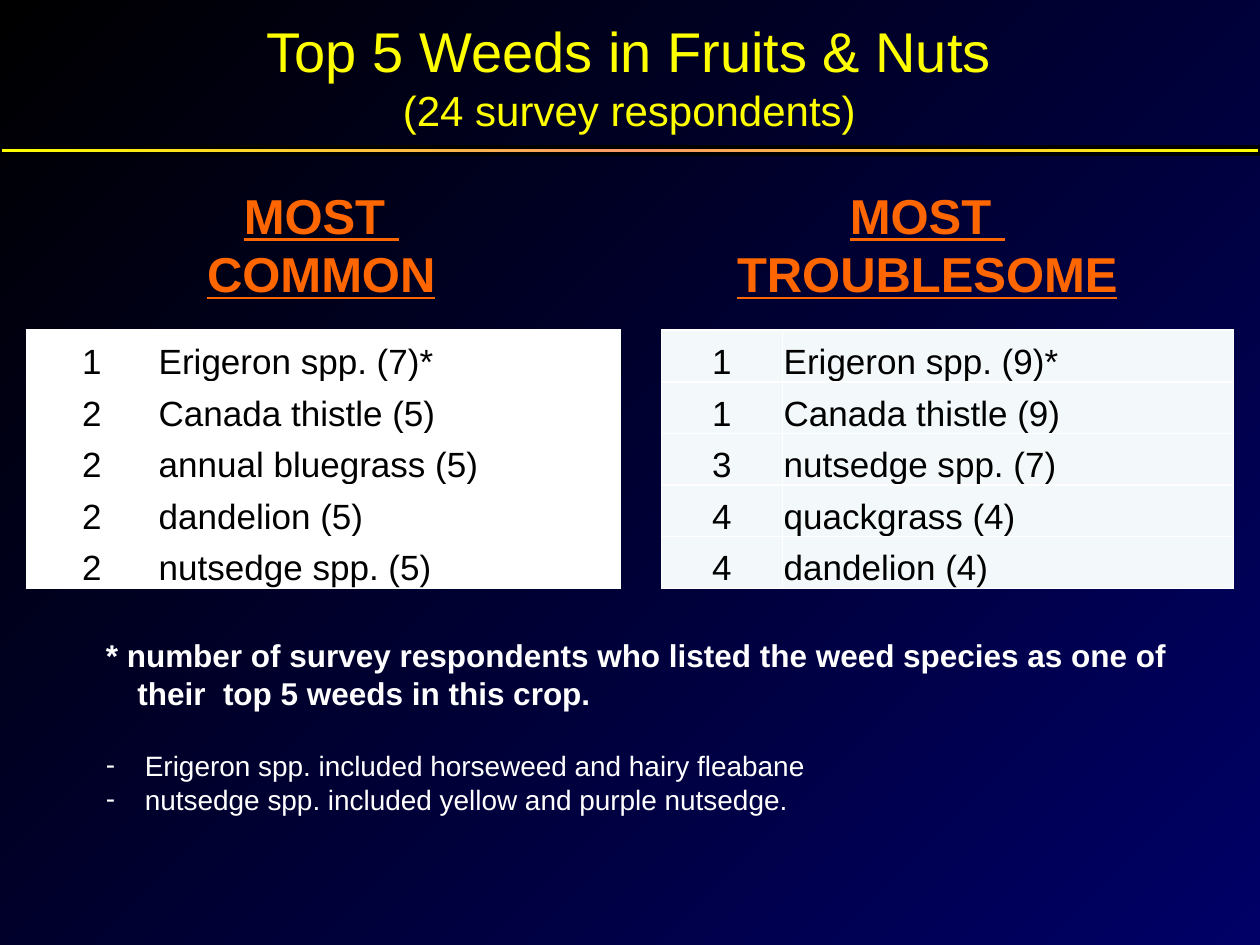
import copy
import pptx
import pptx.util
import pptx.oxml
import pptx.dml.color
import pptx.enum.text
import pptx.enum.shapes

Inches, Pt = pptx.util.Inches, pptx.util.Pt
RGB = pptx.dml.color.RGBColor.from_string
Align = pptx.enum.text.PP_ALIGN
Anchor = pptx.enum.text.MSO_ANCHOR
Fit = pptx.enum.text.MSO_AUTO_SIZE
NS = 'xmlns:a="http://schemas.openxmlformats.org/drawingml/2006/main"'
COLORS = {
    "black": "000000", "navy": "000066", "white": "FFFFFF", "pale": "F3F9FA",
    "yellow": "FFFF00", "peach": "FF9966", "orange": "FF6600",
}


def write(frame, text, size=20, color="white", bold=False, under=False,
          align=Align.LEFT, indent=0, bullet=None, before=0):
    para = frame.paragraphs[0]
    if para.runs:
        para = frame.add_paragraph()
    para.alignment = align
    para.space_before = Pt(before)
    props = para._p.get_or_add_pPr()
    props.set("marL", str(Inches(indent)))
    props.set("indent", str(-Inches(indent)))
    mark = f'<a:buChar {NS} char="{bullet}"/>' if bullet else f"<a:buNone {NS}/>"
    props.append(pptx.oxml.parse_xml(mark))
    run = para.add_run()
    run.text = text
    font = run.font
    font.name, font.size, font.bold, font.underline = "Arial", Pt(size), bold, under
    font.color.rgb = RGB(COLORS[color])


def place(shape, left, top, width, height):
    shape.left, shape.top = Inches(left), Inches(top)
    shape.width, shape.height = Inches(width), Inches(height)


deck = pptx.Presentation()
deck.slide_width, deck.slide_height = Inches(10), Inches(7.5)
slide = deck.slides.add_slide(deck.slide_layouts[1])
back = slide.background.fill
back.gradient()
back.gradient_angle = 315
for stop, name in zip(back.gradient_stops, ("black", "navy")):
    stop.color.rgb = RGB(COLORS[name])

title, notes = slide.placeholders
place(title, 0.33, 0, 9.33, 1.2)
place(notes, 0.74, 5, 8.67, 1.82)
for shape, anchor in ((title, Anchor.MIDDLE), (notes, Anchor.TOP)):
    shape.text_frame.auto_size = Fit.NONE
    shape.text_frame.vertical_anchor = anchor

for text, size in (("Top 5 Weeds in Fruits & Nuts", 32), ("(24 survey respondents)", 24)):
    write(title.text_frame, text, size=size, color="yellow", align=Align.CENTER)

write(notes.text_frame, "* number of survey respondents who listed the weed species "
      "as one of their  top 5 weeds in this crop.", size=18, bold=True, indent=0.25)
for text, gap in (("Erigeron spp. included horseweed and hairy fleabane", 21),
                  ("nutsedge spp. included yellow and purple nutsedge.", 0)):
    write(notes.text_frame, text, size=16, indent=0.31, bullet="-", before=gap)

rule = slide.shapes.add_shape(pptx.enum.shapes.MSO_SHAPE.RECTANGLE,
                              Inches(0), Inches(1.17), Inches(10), Inches(0.05))
rule.shadow.inherit = False
rule.line.color.rgb = RGB(COLORS["black"])
rule.line.width = Pt(2.25)
rule.fill.gradient()
rule.fill.gradient_angle = 0
first = rule.fill._xPr.gradFill.gsLst[0]
first.addnext(copy.deepcopy(first))
for stop, name, pos in zip(rule.fill.gradient_stops, ("yellow", "peach", "yellow"), (0, 0.5, 1)):
    stop.color.rgb = RGB(COLORS[name])
    stop.position = pos

groups = [
    ("COMMON", (1.35, 2.4), True, 0.21, (1.04, 3.67), "white",
     [(1, "Erigeron spp. (7)*"), (2, "Canada thistle (5)"), (2, "annual bluegrass (5)"),
      (2, "dandelion (5)"), (2, "nutsedge spp. (5)")]),
    ("TROUBLESOME", (5.73, 3.26), False, 5.25, (0.96, 3.58), "pale",
     [(1, "Erigeron spp. (9)*"), (1, "Canada thistle (9)"), (3, "nutsedge spp. (7)"),
      (4, "quackgrass (4)"), (4, "dandelion (4)")]),
]
for word, (x, wide), wrap, left, cols, fill, rows in groups:
    head = slide.shapes.add_textbox(Inches(x), Inches(1.42), Inches(wide), Inches(1.04))
    head.text_frame.word_wrap = wrap
    for text in ("MOST ", word):
        write(head.text_frame, text, size=28, color="orange", bold=True,
              under=True, align=Align.CENTER)

    table = slide.shapes.add_table(len(rows), 2, Inches(left), Inches(2.62),
                                   Inches(sum(cols)), Inches(2.05)).table
    table.first_row = table.horz_banding = False
    for col, width in zip(table.columns, cols):
        col.width = Inches(width)
    for r, row in enumerate(rows):
        table.rows[r].height = Inches(0.41)
        for c, text in enumerate(row):
            cell = table.cell(r, c)
            cell.vertical_anchor = Anchor.BOTTOM
            cell.margin_left = cell.margin_right = cell.margin_top = Inches(0.01)
            cell.margin_bottom = 0
            for side in "LRTB":
                cell._tc.get_or_add_tcPr().append(pptx.oxml.parse_xml(
                    f'<a:ln{side} {NS} w="{Pt(1)}"><a:solidFill>'
                    f'<a:srgbClr val="{COLORS["white"]}"/></a:solidFill></a:ln{side}>'))
            cell.fill.solid()
            cell.fill.fore_color.rgb = RGB(COLORS[fill])
            write(cell.text_frame, str(text), color="black",
                  align=Align.LEFT if c else Align.CENTER)

deck.save("out.pptx")
